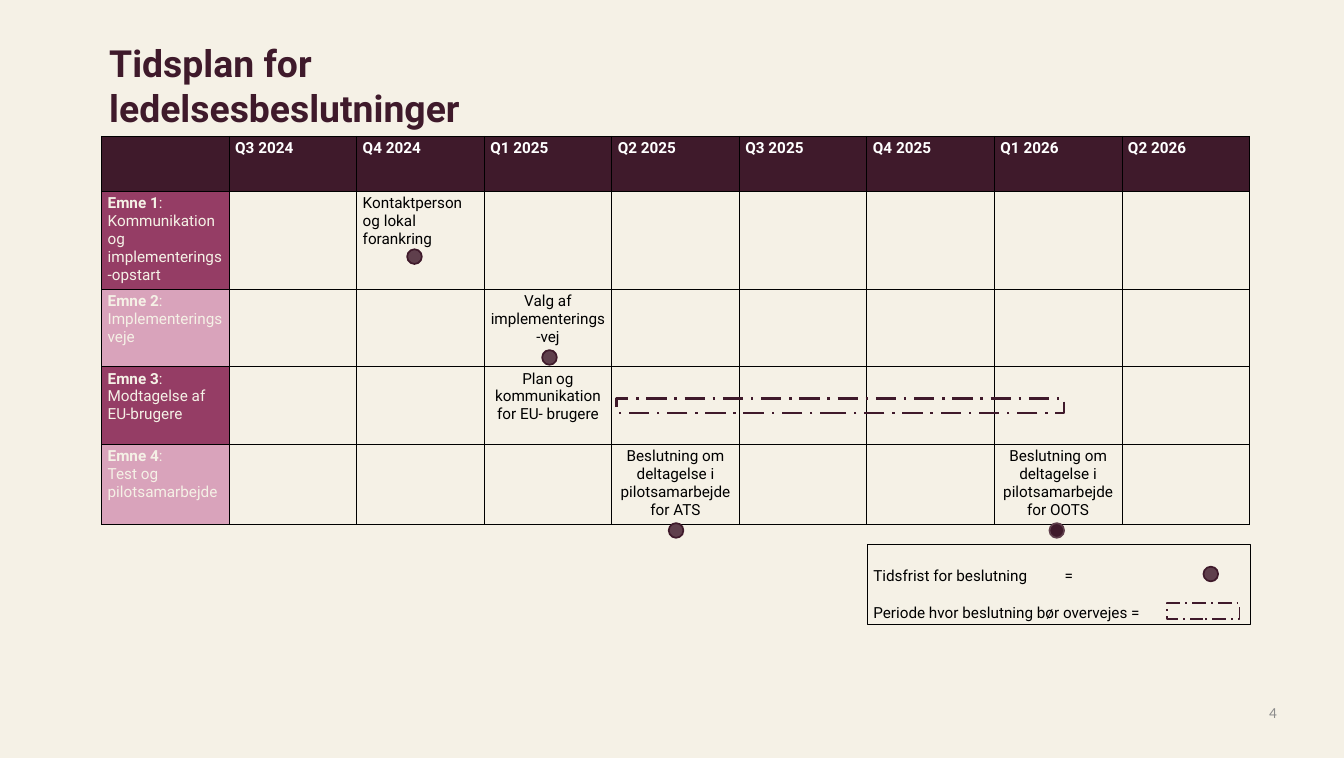
from lxml import etree
from pptx import Presentation
from pptx.dml.color import RGBColor
from pptx.enum.dml import MSO_LINE
from pptx.enum.shapes import MSO_SHAPE
from pptx.enum.text import MSO_ANCHOR, PP_ALIGN
from pptx.oxml.ns import qn
from pptx.util import Cm, Pt

CREAM = RGBColor(0xF5, 0xF1, 0xE6)
PLUM = RGBColor(0x3F, 0x1A, 0x2B)
SOFT_PLUM = RGBColor(0x5F, 0x3F, 0x4C)
BERRY = RGBColor(0x95, 0x3D, 0x65)
PINK = RGBColor(0xD9, 0xA3, 0xBB)
GREY = RGBColor(0x8C, 0x8C, 0x8C)
WHITE = RGBColor(0xFF, 0xFF, 0xFF)
BLACK = RGBColor(0, 0, 0)

LEFT, CENTER, RIGHT = PP_ALIGN.LEFT, PP_ALIGN.CENTER, PP_ALIGN.RIGHT
RECTANGLE, OVAL = MSO_SHAPE.RECTANGLE, MSO_SHAPE.OVAL
LONG_DASH_DOT = MSO_LINE.LONG_DASH_DOT
BOTTOM = MSO_ANCHOR.BOTTOM

COLUMN_WIDTH = 5.3
HEADER_HEIGHT, ROW_HEIGHT = 2.29, 3.23
DOT_SIZE = 0.61

QUARTERS = ["Q3 2024", "Q4 2024", "Q1 2025", "Q2 2025",
            "Q3 2025", "Q4 2025", "Q1 2026", "Q2 2026"]
# Topic text, then the decisions by quarter
TOPICS = [
    (": Kommunikation og implementerings-opstart",
     {"Q4 2024": ("Kontaktperson og lokal forankring", LEFT)}),
    (": Implementeringsveje",
     {"Q1 2025": ("Valg af implementerings-vej", CENTER)}),
    (": Modtagelse af EU-brugere",
     {"Q1 2025": ("Plan og kommunikation for EU- brugere", CENTER)}),
    (": \nTest og pilotsamarbejde",
     {"Q2 2025": ("Beslutning om deltagelse i pilotsamarbejde for ATS", CENTER),
      "Q1 2026": ("Beslutning om deltagelse i pilotsamarbejde for OOTS", CENTER)}),
]
# Left, top, fill, line
DEADLINES = [
    (16.92, 10.36, SOFT_PLUM, PLUM),
    (22.53, 14.55, SOFT_PLUM, PLUM),
    (27.79, 21.74, SOFT_PLUM, PLUM),
    (43.61, 21.74, PLUM, SOFT_PLUM),
    (50.01, 23.55, SOFT_PLUM, PLUM),
]
# Left, top, width, height, line width
PERIODS = [(25.63, 16.56, 18.59, 0.61, 3), (48.51, 25.07, 3, 0.66, 2)]


class SlideBuilder:
    def __init__(self, slide, font="Roboto", size=18):
        self.slide = slide
        self.font = font
        self.size = size

    def add_runs(self, paragraph, runs, color, align=LEFT, size=None, font=None):
        """Add (text, bold) runs; a newline in a text becomes a line break."""
        paragraph.alignment = align
        for text, bold in runs:
            for index, part in enumerate(text.split("\n")):
                if index:
                    paragraph.add_line_break()
                run = paragraph.add_run()
                run.text = part
                run.font.name = font or self.font
                run.font.size = Pt(size or self.size)
                run.font.bold = bold
                run.font.color.rgb = color

    def text_box(self, left, top, width, height, runs, color, **style):
        box = self.slide.shapes.add_textbox(Cm(left), Cm(top), Cm(width), Cm(height))
        box.text_frame.word_wrap = True
        self.add_runs(box.text_frame.paragraphs[0], runs, color, **style)
        return box

    def shape(self, kind, left, top, width, height, line, line_width, fill=None, dash=None):
        shape = self.slide.shapes.add_shape(kind, Cm(left), Cm(top), Cm(width), Cm(height))
        shape.shadow.inherit = False
        if fill is None:
            shape.fill.background()
        else:
            shape.fill.solid()
            shape.fill.fore_color.rgb = fill
        shape.line.color.rgb = line
        shape.line.width = Pt(line_width)
        if dash is not None:
            shape.line.dash_style = dash
        return shape

    def cell(self, cell, fill, runs=(), color=BLACK, align=LEFT):
        properties = cell._tc.get_or_add_tcPr()
        for side in ("a:lnL", "a:lnR", "a:lnT", "a:lnB"):
            border = etree.SubElement(properties, qn(side), w=str(Pt(1)))
            solid = etree.SubElement(border, qn("a:solidFill"))
            etree.SubElement(solid, qn("a:srgbClr"), val=str(BLACK))
        cell.fill.solid()
        cell.fill.fore_color.rgb = fill
        self.add_runs(cell.text_frame.paragraphs[0], runs, color, align)

    def timeline(self, left, top):
        row_count, column_count = len(TOPICS) + 1, len(QUARTERS) + 1
        table = self.slide.shapes.add_table(
            row_count, column_count, Cm(left), Cm(top), Cm(COLUMN_WIDTH * column_count),
            Cm(HEADER_HEIGHT + ROW_HEIGHT * len(TOPICS))).table
        for column in table.columns:
            column.width = Cm(COLUMN_WIDTH)
        for index, row in enumerate(table.rows):
            row.height = Cm(ROW_HEIGHT if index else HEADER_HEIGHT)

        self.cell(table.cell(0, 0), PLUM)
        for column, quarter in enumerate(QUARTERS, 1):
            self.cell(table.cell(0, column), PLUM, [(quarter, True)], WHITE)
        for row, (topic, decisions) in enumerate(TOPICS, 1):
            self.cell(table.cell(row, 0), BERRY if row % 2 else PINK,
                      [(f"Emne {row}", True), (topic, False)], CREAM)
            for column, quarter in enumerate(QUARTERS, 1):
                text, align = decisions.get(quarter, ("", LEFT))
                runs = [(text, False)] if text else []
                self.cell(table.cell(row, column), CREAM, runs, align=align)

    def legend(self, left, top, width, height):
        frame = self.shape(RECTANGLE, left, top, width, height, BLACK, 0.75).text_frame
        frame.word_wrap = True
        frame.vertical_anchor = BOTTOM
        deadline = frame.paragraphs[0]
        tabs = etree.SubElement(deadline._p.get_or_add_pPr(), qn("a:tabLst"))
        etree.SubElement(tabs, qn("a:tab"), pos=str(Cm(7.95)), algn="l")
        self.add_runs(deadline, [("Tidsfrist for beslutning\t=", False)], BLACK)
        period = frame.add_paragraph()
        period.space_before = Pt(21)
        self.add_runs(period, [("Periode hvor beslutning bør overvejes =", False)], BLACK)


def main():
    presentation = Presentation()
    presentation.slide_width = Cm(55.85)
    presentation.slide_height = Cm(31.5)
    slide = presentation.slides.add_slide(presentation.slide_layouts[6])
    slide.background.fill.solid()
    slide.background.fill.fore_color.rgb = CREAM

    builder = SlideBuilder(slide)
    number = builder.text_box(40.21, 29.21, 12.85, 1.57, [("4", False)], GREY,
                              align=RIGHT, font="Calibri").text_frame
    number.margin_left = number.margin_right = number.margin_top = number.margin_bottom = 0
    builder.text_box(4.29, 1.55, 22.38, 2.13,
                     [("Tidsplan for ledelsesbeslutninger", True)], PLUM, size=44)
    builder.timeline(4.22, 5.66)
    builder.legend(36.04, 22.61, 15.9, 3.33)
    for left, top, fill, line in DEADLINES:
        builder.shape(OVAL, left, top, DOT_SIZE, DOT_SIZE, line, 2, fill)
    for left, top, width, height, line_width in PERIODS:
        builder.shape(RECTANGLE, left, top, width, height, PLUM, line_width,
                      dash=LONG_DASH_DOT)
    presentation.save("out.pptx")


if __name__ == "__main__":
    main()
